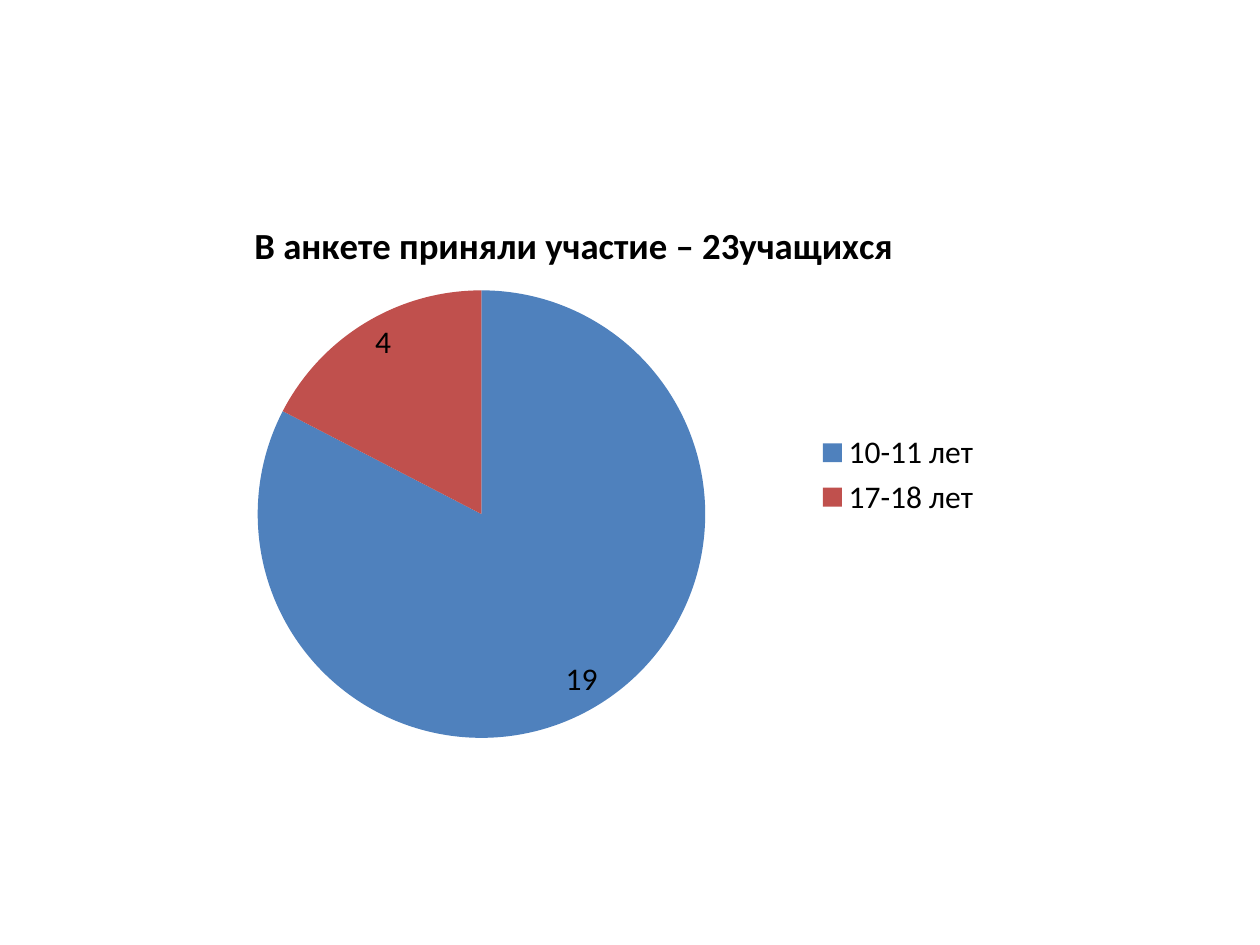
from lxml import etree
from pptx import Presentation
from pptx import util as u
from pptx.chart.data import CategoryChartData
from pptx.dml.color import RGBColor
from pptx.enum import chart as charts
from pptx.oxml.ns import qn

COLOURS = {"text": "000000", "10-11 лет": "4F81BD", "17-18 лет": "C0504D"}
COUNTS = {"10-11 лет": 19, "17-18 лет": 4}
PIE_AREA = {"x": 0.12, "y": 0.17, "w": 0.54, "h": 0.8}


def style(font, **values):
    for name, value in {"name": "Calibri", "size": u.Pt(18), "bold": False, **values}.items():
        setattr(font, name, value)
    font.color.rgb = RGBColor.from_string(COLOURS["text"])


deck = Presentation()
deck.slide_width, deck.slide_height = u.Inches(10), u.Inches(7.5)
page = deck.slides.add_slide(deck.slide_layouts[6])

data = CategoryChartData()
data.categories = list(COUNTS)
data.add_series("Series 1", list(COUNTS.values()))
pie = page.shapes.add_chart(
    charts.XL_CHART_TYPE.PIE,
    u.Inches(1.22), u.Inches(1.55), u.Inches(6.67), u.Inches(4.44), data,
).chart
style(pie.font)

pie.has_title = True
frame = pie.chart_title.text_frame
frame.word_wrap = False
span = frame.paragraphs[0].add_run()
span.text = "В анкете приняли участие – 23учащихся"
style(span.font, size=u.Pt(21), bold=True)
pie.chart_title.include_in_layout = False

pie.has_legend = True
pie.legend.position = charts.XL_LEGEND_POSITION.RIGHT
pie.legend.include_in_layout = False
style(pie.legend.font)

plot = pie.plots[0]
plot.vary_by_categories = True
plot.has_data_labels = True
labels = plot.data_labels
labels.show_value = True
labels.show_percentage = False
labels.position = charts.XL_LABEL_POSITION.BEST_FIT
style(labels.font)

for index, age in enumerate(COUNTS):
    fill = plot.series[0].points[index].format.fill
    fill.solid()
    fill.fore_color.rgb = RGBColor.from_string(COLOURS[age])

# Fix the pie's place as shares of the chart area
plot_area = pie.element.find(".//" + qn("c:plotArea"))
for old_layout in plot_area.findall(qn("c:layout")):
    plot_area.remove(old_layout)
layout = etree.Element(qn("c:layout"))
manual = etree.SubElement(layout, qn("c:manualLayout"))
settings = {"layoutTarget": "inner", "xMode": "edge", "yMode": "edge", **PIE_AREA}
for tag, value in settings.items():
    etree.SubElement(manual, qn("c:" + tag)).set("val", str(value))
plot_area.insert(0, layout)

deck.save("out.pptx")
